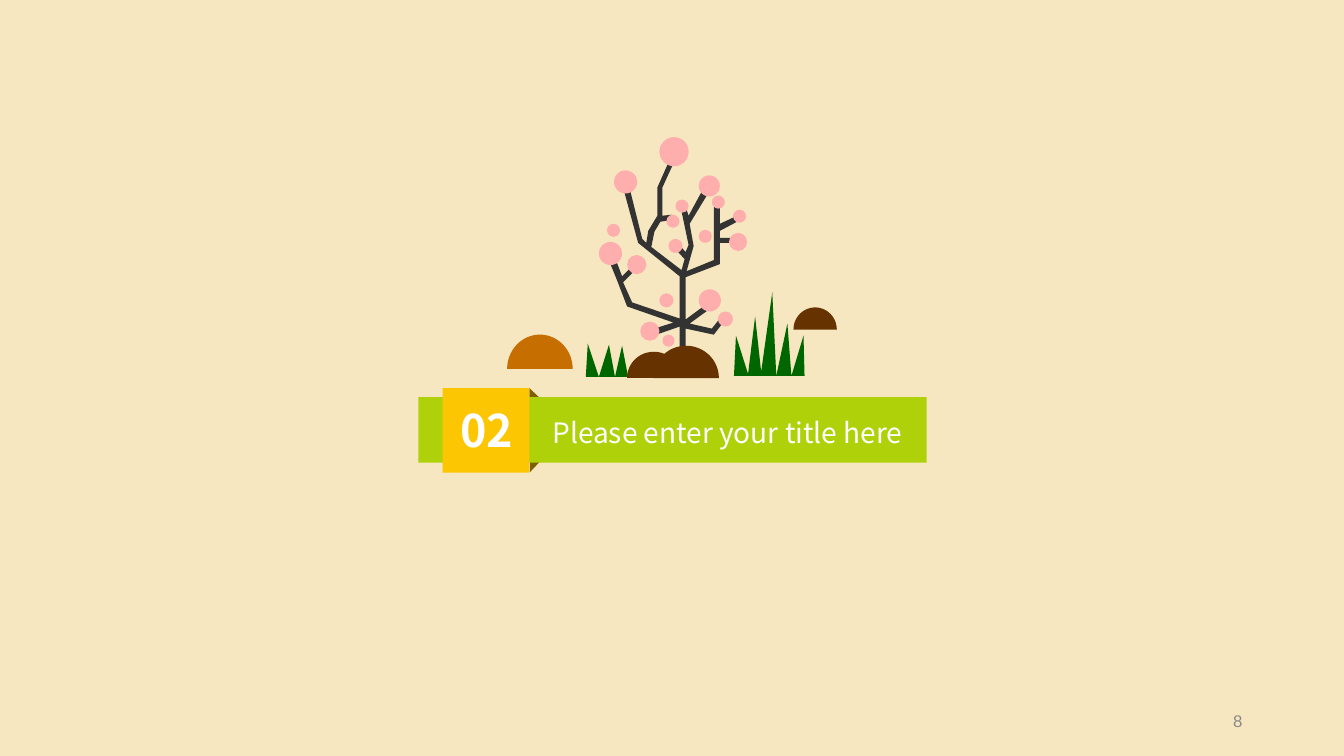
import math

import pptx
import pptx.dml.color
import pptx.enum.shapes
import pptx.enum.text
import pptx.util

Inches = pptx.util.Inches
ShapeType = pptx.enum.shapes.MSO_SHAPE
Anchor = pptx.enum.text.MSO_ANCHOR
Align = pptx.enum.text.PP_ALIGN

COLORS = {
    "background": "F6E7C0",
    "fold": "7F6000",
    "banner": "AFD109",
    "badge": "FDC602",
    "white": "FFFFFF",
    "grass": "006600",
    "soil": "663300",
    "clay": "C66E00",
    "branch": "333333",
    "blossom": "FFAEAE",
    "page_number": "898989",
}

SMALL_GRASS = [(5.81, 3.74), (5.83, 3.41), (5.94, 3.74), (6.04, 3.42),
               (6.1, 3.74), (6.17, 3.43), (6.23, 3.74)]

TALL_GRASS = [(7.28, 3.73), (7.3, 3.33), (7.42, 3.71), (7.49, 3.14),
              (7.55, 3.69), (7.66, 2.9), (7.7, 3.73), (7.81, 3.21),
              (7.85, 3.73), (7.97, 3.33), (7.98, 3.73)]

TREE = [
    (7.14, 2.29), (7.31, 2.2), (7.29, 2.15), (7.14, 2.22), (7.14, 2.05),
    (7.08, 2.05), (7.08, 2.58), (6.81, 2.69), (6.88, 2.44), (6.84, 2.22),
    (7.01, 1.94), (6.96, 1.9), (6.83, 2.14), (6.79, 2.02), (6.76, 2.06),
    (6.75, 2.05), (6.83, 2.43), (6.8, 2.5), (6.72, 2.41), (6.68, 2.45),
    (6.79, 2.57), (6.76, 2.68), (6.46, 2.45), (6.49, 2.3), (6.55, 2.2),
    (6.67, 2.18), (6.66, 2.13), (6.57, 2.14), (6.57, 1.86), (6.68, 1.62),
    (6.64, 1.59), (6.52, 1.86), (6.52, 2.14), (6.43, 2.29), (6.41, 2.41),
    (6.37, 2.37), (6.24, 1.85), (6.18, 1.86), (6.33, 2.41), (6.74, 2.74),
    (6.74, 3.16), (6.27, 3), (6.18, 2.8), (6.3, 2.68), (6.27, 2.64),
    (6.17, 2.74), (6.09, 2.53), (6.03, 2.56), (6.12, 2.78), (6.22, 3.04),
    (6.68, 3.2), (6.49, 3.26), (6.51, 3.32), (6.74, 3.24), (6.74, 3.64),
    (6.8, 3.64), (6.8, 3.26), (7.08, 3.32), (7.18, 3.19), (7.14, 3.16),
    (7.06, 3.26), (6.84, 3.21), (7.06, 3.05), (7.03, 3), (6.8, 3.17),
    (6.8, 2.75), (7.14, 2.62), (7.14, 2.41), (7.27, 2.41), (7.27, 2.36),
    (7.14, 2.36),
]

BLOSSOMS = [
    (6.54, 1.36, 0.29), (6.09, 1.69, 0.23), (6.22, 2.53, 0.19),
    (7.23, 2.31, 0.18), (7.12, 3.09, 0.15), (6.93, 2.87, 0.22),
    (6.35, 3.19, 0.19), (6.57, 3.32, 0.12), (6.02, 2.22, 0.13),
    (7.27, 2.08, 0.13), (6.61, 2.13, 0.13), (6.7, 1.98, 0.13),
    (6.63, 2.37, 0.14), (6.54, 2.91, 0.14), (7.06, 1.94, 0.13),
    (6.93, 1.74, 0.21), (6.93, 2.28, 0.13), (5.94, 2.4, 0.23),
]


class SlideBuilder:
    def __init__(self, presentation):
        self.font = "Noto Sans CJK SC"
        self.slide = presentation.slides.add_slide(presentation.slide_layouts[6])
        self.paint(self.slide.background.fill, "background")

    def paint(self, fill, color):
        fill.solid()
        fill.fore_color.rgb = pptx.dml.color.RGBColor.from_string(COLORS[color])

    def finish(self, shape, color):
        self.paint(shape.fill, color)
        shape.line.fill.background()
        shape.shadow.inherit = False

    def preset(self, kind, left, top, width, height, color, rotation=0):
        shape = self.slide.shapes.add_shape(
            kind, Inches(left), Inches(top), Inches(width), Inches(height))
        shape.rotation = rotation
        self.finish(shape, color)

    def outline(self, points, color):
        corners = [(Inches(x), Inches(y)) for x, y in points]
        builder = self.slide.shapes.build_freeform(*corners[0])
        builder.add_line_segments(corners[1:], close=True)
        self.finish(builder.convert_to_shape(), color)

    def mound(self, left, top, width, height, color, steps=36):
        angles = [math.pi * step / steps for step in range(steps + 1)]
        self.outline([(left + width / 2 * (1 - math.cos(angle)),
                       top + height * (1 - math.sin(angle)))
                      for angle in angles], color)

    def text(self, words, left, top, width, height, size, color,
             align=Align.CENTER, anchor=Anchor.MIDDLE, font=None,
             bold=False, wrap=True):
        box = self.slide.shapes.add_textbox(
            Inches(left), Inches(top), Inches(width), Inches(height))
        frame = box.text_frame
        frame.text = words
        frame.word_wrap = wrap
        frame.vertical_anchor = anchor
        paragraph = frame.paragraphs[0]
        paragraph.alignment = align
        run = paragraph.runs[0]
        run.font.name = font or self.font
        run.font.size = pptx.util.Pt(size)
        run.font.bold = bold
        self.paint(run.font.fill, color)


def main():
    presentation = pptx.Presentation()
    presentation.slide_width = Inches(13.33)
    presentation.slide_height = Inches(7.5)
    builder = SlideBuilder(presentation)

    builder.text("8", 9.42, 6.95, 3, 0.4, 12, "page_number",
                 align=Align.RIGHT, font="Arial")

    for top, rotation in ((3.85, 0), (4.5, 90)):
        builder.preset(ShapeType.RIGHT_TRIANGLE, 5.25, top, 0.19, 0.18,
                       "fold", rotation)
    builder.preset(ShapeType.RECTANGLE, 4.15, 3.94, 5.04, 0.65, "banner")
    builder.preset(ShapeType.RECTANGLE, 4.39, 3.85, 0.86, 0.84, "badge")
    builder.text("02", 4.45, 3.95, 0.76, 0.64, 32, "white",
                 anchor=Anchor.TOP, bold=True, wrap=False)
    builder.text("Please enter your title here", 5.01, 4.01, 4.41, 0.55,
                 20, "white")

    builder.outline(SMALL_GRASS, "grass")
    builder.mound(7.87, 3.05, 0.43, 0.22, "soil")
    builder.mound(5.03, 3.32, 0.65, 0.34, "clay")
    builder.mound(6.22, 3.49, 0.53, 0.26, "soil")
    builder.outline(TREE, "branch")
    for left, top, diameter in BLOSSOMS:
        builder.preset(ShapeType.OVAL, left, top, diameter, diameter, "blossom")
    builder.outline(TALL_GRASS, "grass")
    builder.mound(6.48, 3.43, 0.65, 0.32, "soil")

    presentation.save("out.pptx")


if __name__ == "__main__":
    main()
